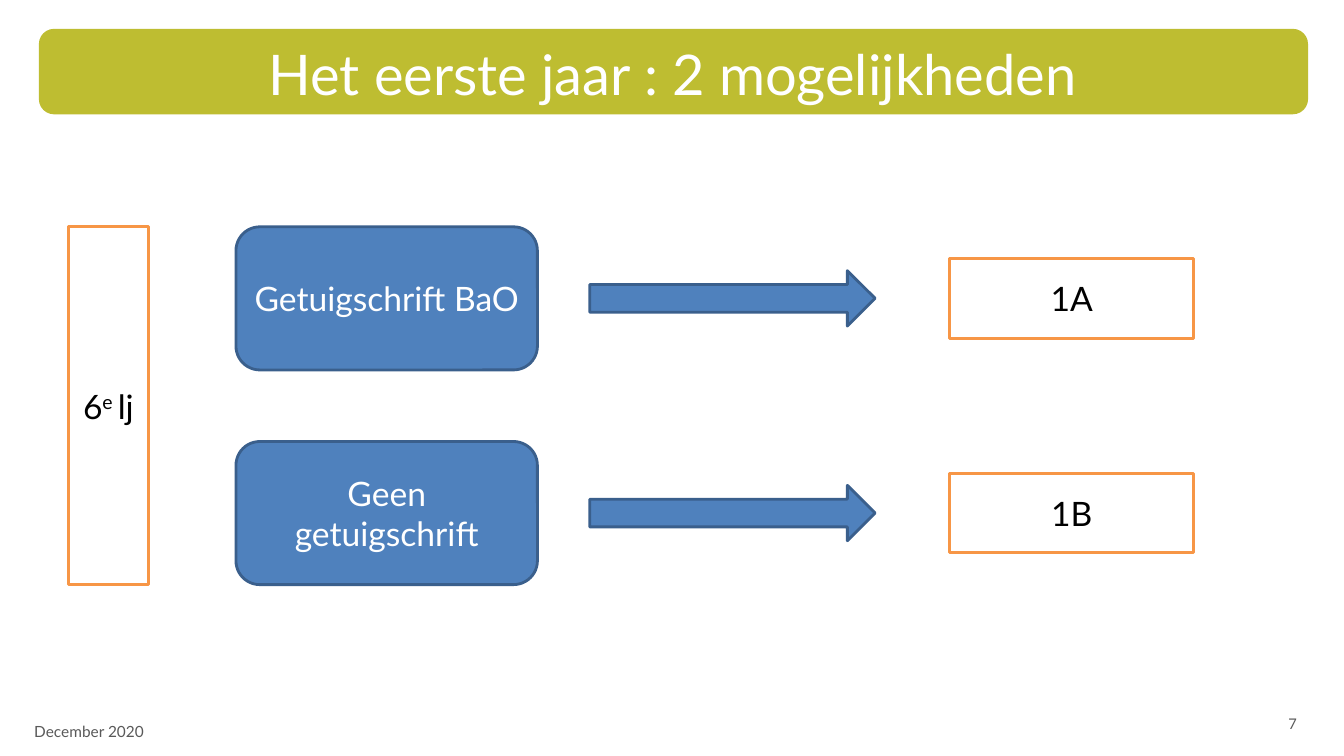
from pptx import Presentation
from pptx.dml.color import RGBColor as Rgb
from pptx.enum.shapes import MSO_SHAPE as Kind
from pptx.enum.text import MSO_ANCHOR as Anchor, MSO_AUTO_SIZE as Auto, PP_ALIGN as Align
from pptx.util import Inches, Pt

TITLE = "Het eerste jaar : 2 mogelijkheden"
START = [("6", 0), ("e ", 30000), ("lj", 0)]
ROUTES = [("Getuigschrift BaO", "1A"), ("Geen getuigschrift", "1B")]
DATE, PAGE = "December 2020", "7"

COLORS = {"lime": "BEBD31", "blue": "4F81BD", "navy": "3A5F8C", "orange": "F79646",
          "white": "FFFFFF", "black": "000000", "gray": "595959"}
STYLES = {"banner": ("lime", "lime"), "route": ("blue", "navy"), "frame": ("white", "orange")}
WIDE, HIGH = 13.33, 7.5
TOP, STEP, ROW = 2.25, 2.13, 1.42
COLS = {"start": (0.68, 0.79), "route": (2.34, 2.99), "arrow": (5.85, 2.83), "goal": (9.42, 2.42)}
THIN, GOAL = 0.55, 0.79


def color(name):
    return Rgb.from_string(COLORS[name])


def write(shape, runs, size, tone, align=Align.CENTER, anchor=Anchor.MIDDLE):
    frame = shape.text_frame
    look = {"word_wrap": True, "auto_size": Auto.NONE, "vertical_anchor": anchor}
    for key, value in look.items():
        setattr(frame, key, value)
    para = frame.paragraphs[0]
    para.alignment = align
    for text, base in runs:
        run = para.add_run()
        run.text = text
        for key, value in {"name": "Lato", "size": Pt(size), "bold": False}.items():
            setattr(run.font, key, value)
        run.font.color.rgb = color(tone)
        if base:
            run._r.get_or_add_rPr().set("baseline", str(base))


def draw(kind, box, style):
    shape = slide.shapes.add_shape(kind, *map(Inches, box))
    fill, line = STYLES[style]
    shape.shadow.inherit = False
    shape.fill.solid()
    shape.fill.fore_color.rgb = color(fill)
    shape.line.color.rgb = color(line)
    shape.line.width = Pt(2)
    return shape


def cell(col, row, height):
    left, width = COLS[col]
    return left, TOP + row * STEP + (ROW - height) / 2, width, height


deck = Presentation()
deck.slide_width, deck.slide_height = Inches(WIDE), Inches(HIGH)
slide = deck.slides.add_slide(deck.slide_layouts[5])

title = slide.shapes.title
for key, value in {"left": 0.67, "top": 0.34, "width": 12, "height": 0.69}.items():
    setattr(title, key, Inches(value))
write(title, [(TITLE, 0)], 40, "white", anchor=Anchor.TOP)
banner = draw(Kind.ROUNDED_RECTANGLE, (0.4, 0.3, 12.56, 0.82), "banner")
title._element.addprevious(banner._element)

left, width = COLS["start"]
start = draw(Kind.RECTANGLE, (left, TOP, width, STEP + ROW), "frame")
write(start, START, 24, "black")

for row, (route, goal) in enumerate(ROUTES):
    box = draw(Kind.ROUNDED_RECTANGLE, cell("route", row, ROW), "route")
    write(box, [(route, 0)], 24, "white")
    draw(Kind.RIGHT_ARROW, cell("arrow", row, THIN), "route")
    box = draw(Kind.RECTANGLE, cell("goal", row, GOAL), "frame")
    write(box, [(goal, 0)], 24, "black")

for text, box, size, align in [(PAGE, (9.88, 6.98, 3.08, 0.4), 10.5, Align.RIGHT),
                               (DATE, (0.24, 7.06, 3.41, 0.4), 11, Align.LEFT)]:
    note = slide.shapes.add_textbox(*map(Inches, box))
    write(note, [(text, 0)], size, "gray", align)

deck.save("out.pptx")
